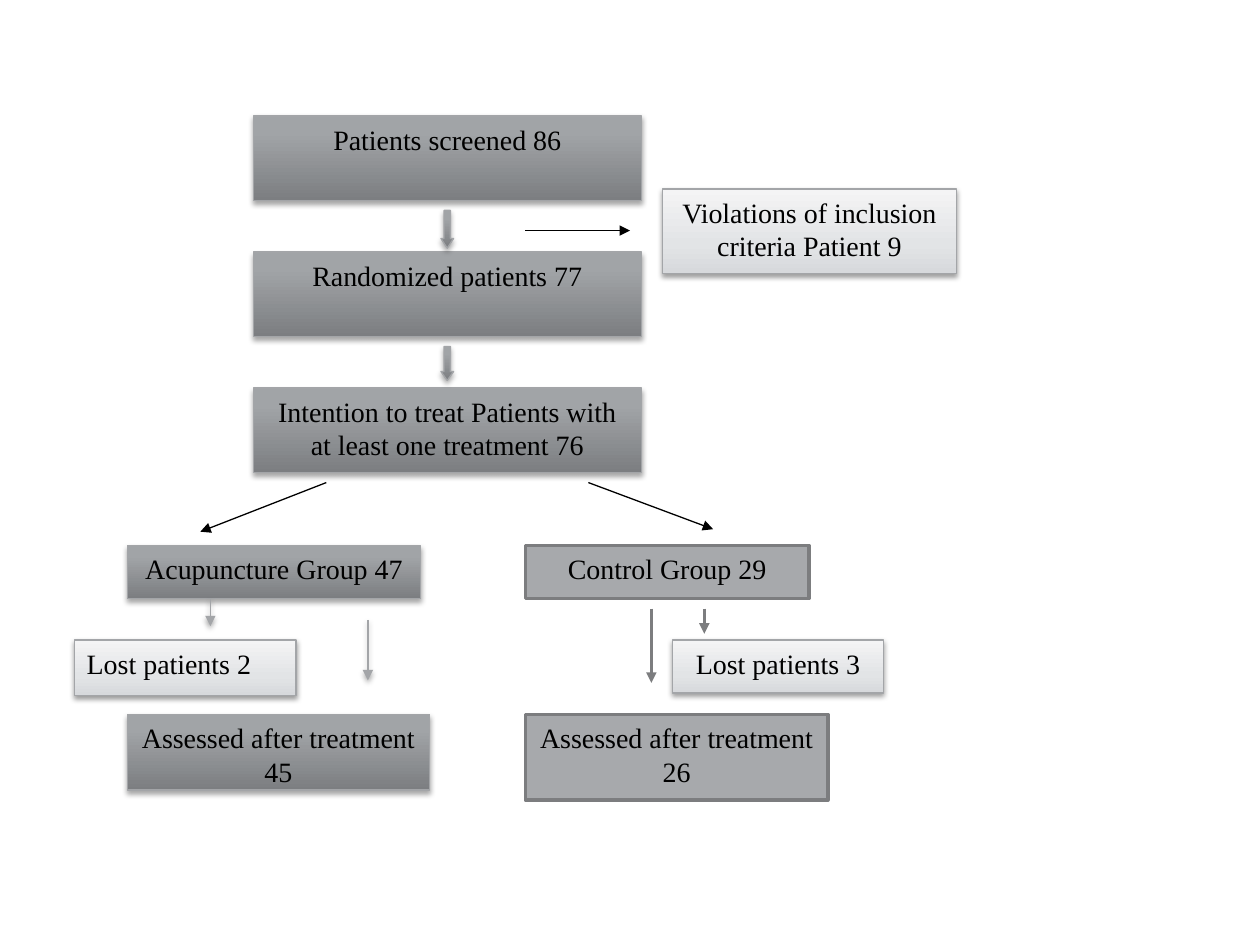
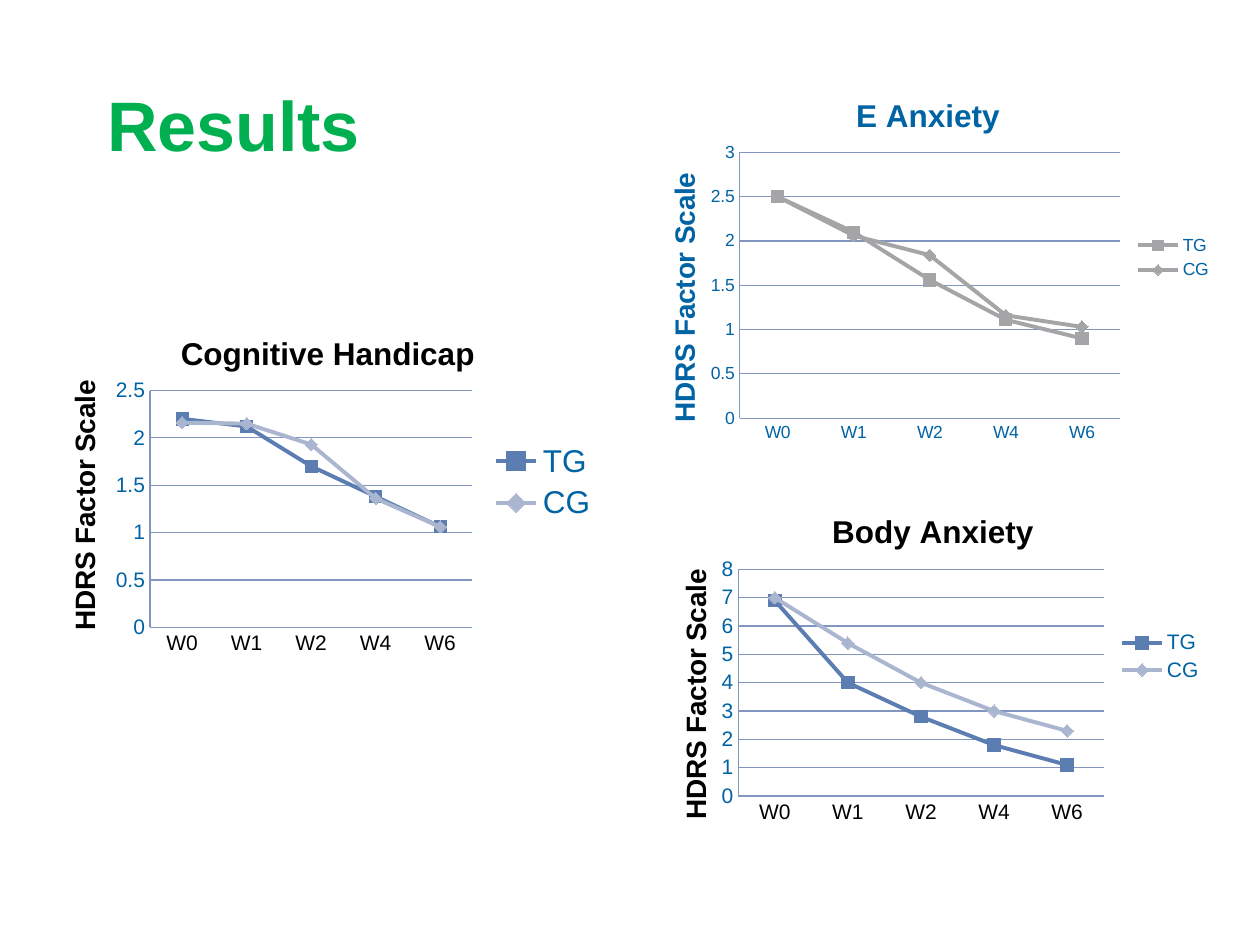
from lxml import etree
from pptx import Presentation, util as u
from pptx.chart.data import CategoryChartData
from pptx.dml.color import RGBColor
from pptx.enum import chart as ch, shapes, text
from pptx.oxml.ns import qn

COLORS = {
    "black": "000000", "green": "00B050", "blue": "0063A4",
    "edge": "A3A5A8", "gray": "A7A9AC", "dark_edge": "7C7D7F",
    "grid": "8096BE", "steel": "5B7DB1", "pale": "AAB5D0", "silver": "A5A5A7",
}
STYLES = {
    "dark": {"stops": [(0, "7C7E81"), (80, "A1A4A7"), (100, "A2A4A8")],
             "edge": "edge", "width": 0.75, "shadow": (35, 1.8)},
    "light": {"stops": [(0, "D7D9DC"), (35, "E2E4E6"), (100, "F4F4F5")],
              "edge": "edge", "width": 0.75, "shadow": (38, 1.6)},
    "flat": {"fill": "gray", "edge": "dark_edge", "width": 2, "shadow": None},
    "plain": {"edge": "black", "width": 0.75, "shadow": None},
}
PROCESS = shapes.MSO_SHAPE.FLOWCHART_PROCESS
WEEKS = ["W0", "W1", "W2", "W4", "W6"]


def color(name):
    """Return the named colour."""
    return RGBColor.from_string(COLORS[name])


def set_font(font, size, tint, face="Arial", bold=False):
    """Format a font."""
    font.name, font.size, font.bold = face, u.Pt(size), bold
    font.color.rgb = color(tint)


def element(parent, tag, **attributes):
    """Append an XML child with the given attributes."""
    child = etree.SubElement(parent, qn(tag))
    for key, value in attributes.items():
        child.set(key, str(value))
    return child


def set_gradient(fill, stops):
    """Fill from bottom to top through the stops."""
    fill.gradient()
    fill.gradient_angle = 90
    stop_list = fill._fill._gradFill.find(qn("a:gsLst"))
    for stop in list(stop_list):
        stop_list.remove(stop)
    for position, tint in stops:
        stop = element(stop_list, "a:gs", pos=position * 1000)
        element(stop, "a:srgbClr", val=tint)


def set_outline(shape, style):
    """Apply the line and shadow of a style."""
    shape.line.color.rgb = color(style["edge"])
    shape.line.width = u.Pt(style["width"])
    effects = element(shape._element.spPr, "a:effectLst")
    if style["shadow"]:
        opacity, distance = style["shadow"]
        shadow = element(effects, "a:outerShdw", blurRad=u.Pt(3.1),
                         dist=u.Pt(distance), dir=5400000, rotWithShape=0)
        tint = element(shadow, "a:srgbClr", val=COLORS["black"])
        element(tint, "a:alpha", val=opacity * 1000)


def add_node(page, kind, style_name, bounds):
    """Add a filled shape in one of the shared styles."""
    style = STYLES[style_name]
    node = page.shapes.add_shape(kind, *map(u.Inches, bounds))
    if "stops" in style:
        set_gradient(node.fill, style["stops"])
    else:
        node.fill.solid()
        node.fill.fore_color.rgb = color(style["fill"])
    set_outline(node, style)
    return node


def add_box(page, words, style_name, bounds, kind=PROCESS,
            align=text.PP_ALIGN.CENTER):
    """Add a labelled flowchart box."""
    frame = add_node(page, kind, style_name, bounds).text_frame
    frame.word_wrap = True
    frame.vertical_anchor = text.MSO_ANCHOR.TOP
    para = frame.paragraphs[0]
    para.alignment = align
    span = para.add_run()
    span.text = words
    set_font(span.font, 16, "black", "Times New Roman")


def add_block_arrow(page, bounds, head):
    """Add a small block arrow pointing down."""
    arrow = add_node(page, shapes.MSO_SHAPE.DOWN_ARROW, "dark", bounds)
    arrow.adjustments[0], arrow.adjustments[1] = 0.5, head


def add_arrow(page, style_name, *ends):
    """Add a line with an arrowhead at its end."""
    arrow = page.shapes.add_connector(shapes.MSO_CONNECTOR.STRAIGHT,
                                      *map(u.Inches, ends))
    set_outline(arrow, STYLES[style_name])
    element(arrow.line._get_or_add_ln(), "a:tailEnd", type="triangle")


def place(parent, bounds, position, size=None):
    """Fix the place of a chart part, given in slide inches."""
    layout = parent.find(qn("c:layout"))
    if layout is None:
        layout = element(parent, "c:layout")
        parent.insert(0 if parent.find(qn("c:tx")) is None else 1, layout)
    for child in list(layout):
        layout.remove(child)
    manual = element(layout, "c:manualLayout")
    if size:
        element(manual, "c:layoutTarget", val="inner")
    element(manual, "c:xMode", val="edge")
    element(manual, "c:yMode", val="edge")
    left, top, width, height = bounds
    element(manual, "c:x", val=round((position[0] - left) / width, 4))
    element(manual, "c:y", val=round((position[1] - top) / height, 4))
    if size:
        element(manual, "c:w", val=round(size[0] / width, 4))
        element(manual, "c:h", val=round(size[1] / height, 4))


def set_title(owner, words, size, tint, bounds, position):
    """Title a chart or an axis in bold."""
    title = owner.chart_title if hasattr(owner, "chart_title") else owner.axis_title
    span = title.text_frame.paragraphs[0].add_run()
    span.text = words
    set_font(span.font, size, tint, bold=True)
    place(title._element, bounds, position)


def format_axis(axis, size, tint):
    """Format the ticks, labels and line of an axis."""
    axis.major_tick_mark = axis.minor_tick_mark = ch.XL_TICK_MARK.NONE
    set_font(axis.tick_labels.font, size, tint)
    axis.format.line.color.rgb = color("grid")
    axis.format.line.width = u.Pt(0.75)


def add_line_chart(page, title, bounds, plot, title_at, axis_title_at, series,
                   maximum, step, tints=("steel", "pale"), label_size=12,
                   legend_size=12, tint="black"):
    """Add a line chart of the treatment and control groups."""
    data = CategoryChartData()
    data.categories = WEEKS
    for name, values in zip(("TG", "CG"), series):
        data.add_series(name, values)
    chart = page.shapes.add_chart(ch.XL_CHART_TYPE.LINE_MARKERS,
                                  *map(u.Inches, bounds), data).chart
    set_font(chart.font, label_size, "blue")
    set_title(chart, title, 18, tint, bounds, title_at)
    chart.has_legend = True
    chart.legend.position = ch.XL_LEGEND_POSITION.RIGHT
    chart.legend.include_in_layout = False
    set_font(chart.legend.font, legend_size, "blue")

    axis = chart.value_axis
    format_axis(chart.category_axis, label_size, tint)
    format_axis(axis, label_size, "blue")
    axis.minimum_scale, axis.maximum_scale, axis.major_unit = 0, maximum, step
    axis.has_major_gridlines = True
    axis.major_gridlines.format.line.color.rgb = color("grid")
    axis.major_gridlines.format.line.width = u.Pt(0.75)
    set_title(axis, "HDRS Factor Scale", 16, tint, bounds, axis_title_at)
    place(chart._chartSpace.chart.plotArea, bounds, plot[:2], plot[2:])

    chart.plots[0].vary_by_categories = False
    markers = (ch.XL_MARKER_STYLE.SQUARE, ch.XL_MARKER_STYLE.DIAMOND)
    for line, line_tint, marker in zip(chart.plots[0].series, tints, markers):
        line.smooth = False
        line.format.line.color.rgb = color(line_tint)
        line.format.line.width = u.Pt(2.25)
        line.marker.style, line.marker.size = marker, 7
        line.marker.format.fill.solid()
        line.marker.format.fill.fore_color.rgb = color(line_tint)
        line.marker.format.line.color.rgb = color(line_tint)


def build_patient_flow(deck):
    """Build the flowchart of patients through the study."""
    page = deck.slides.add_slide(deck.slide_layouts[6])
    stages = ["Patients screened 86", "Randomized patients 77",
              "Intention to treat Patients with at least one treatment 76"]
    for row, words in enumerate(stages):
        add_box(page, words, "dark", (2.01, 0.92 + 1.08 * row, 3.08, 0.67))
    add_block_arrow(page, (3.5, 1.67, 0.1, 0.3), 0.77)
    add_block_arrow(page, (3.5, 2.75, 0.1, 0.27), 0.71)

    add_box(page, "Acupuncture Group 47", "dark", (1.01, 4.33, 2.33, 0.42))
    add_box(page, "Control Group 29", "flat", (4.17, 4.33, 2.25, 0.42))
    add_box(page, "Lost patients 2", "light", (0.59, 5.08, 1.76, 0.44),
            align=text.PP_ALIGN.LEFT)
    add_box(page, "Lost patients 3", "light", (5.34, 5.08, 1.67, 0.42))
    add_box(page, "Assessed after treatment 45", "dark", (1.01, 5.67, 2.4, 0.6))
    add_box(page, "Assessed after treatment 26", "flat", (4.17, 5.67, 2.4, 0.68))
    add_box(page, "Violations of inclusion criteria Patient 9", "light",
            (5.26, 1.5, 2.33, 0.67), shapes.MSO_SHAPE.RECTANGLE)

    for style_name, *ends in [
        ("plain", 4.17, 1.83, 5, 1.83),
        ("plain", 4.67, 3.83, 5.66, 4.2),
        ("plain", 2.59, 3.83, 1.59, 4.22),
        ("dark", 2.92, 4.92, 2.92, 5.4),
        ("dark", 1.67, 4.75, 1.67, 4.97),
        ("flat", 5.17, 4.83, 5.17, 5.42),
        ("flat", 5.59, 4.83, 5.59, 5.03),
    ]:
        add_arrow(page, style_name, *ends)


def build_results(deck):
    """Build the slide of three outcome charts."""
    page = deck.slides.add_slide(deck.slide_layouts[5])
    title = page.shapes.title
    title.left, title.top, title.width, title.height = map(
        u.Inches, (0.75, 0.6, 2.23, 0.77))
    frame = title.text_frame
    frame.word_wrap = False
    frame.auto_size = text.MSO_AUTO_SIZE.SHAPE_TO_FIT_TEXT
    frame.vertical_anchor = text.MSO_ANCHOR.TOP
    para = frame.paragraphs[0]
    para.alignment = text.PP_ALIGN.LEFT
    span = para.add_run()
    span.text = "Results"
    set_font(span.font, 40, "green", bold=True)

    add_line_chart(page, "E Anxiety", (5, 0.52, 4.72, 3.05),
                   (5.87, 1.21, 3.02, 2.11), (6.75, 0.71), (5.25, 1.33),
                   [(2.5, 2.1, 1.56, 1.11, 0.9), (2.5, 2.06, 1.84, 1.16, 1.03)],
                   3, 0.5, tints=("silver", "silver"), label_size=10,
                   legend_size=10, tint="blue")
    add_line_chart(page, "Body Anxiety", (5.08, 3.83, 4.57, 2.76),
                   (5.86, 4.52, 2.9, 1.8), (6.56, 4.01), (5.34, 4.48),
                   [(6.9, 4, 2.8, 1.8, 1.1), (7, 5.4, 4, 3, 2.3)], 8, 1)
    add_line_chart(page, "Cognitive Handicap", (0.28, 2.41, 4.57, 2.83),
                   (1.19, 3.1, 2.56, 1.88), (1.39, 2.6), (0.49, 2.98),
                   [(2.2, 2.12, 1.7, 1.38, 1.06), (2.16, 2.15, 1.93, 1.36, 1.06)],
                   2.5, 0.5, legend_size=18)


def main():
    """Build and save the deck."""
    deck = Presentation()
    deck.slide_width, deck.slide_height = u.Inches(10), u.Inches(7.5)
    build_patient_flow(deck)
    build_results(deck)
    deck.save("out.pptx")


if __name__ == "__main__":
    main()
